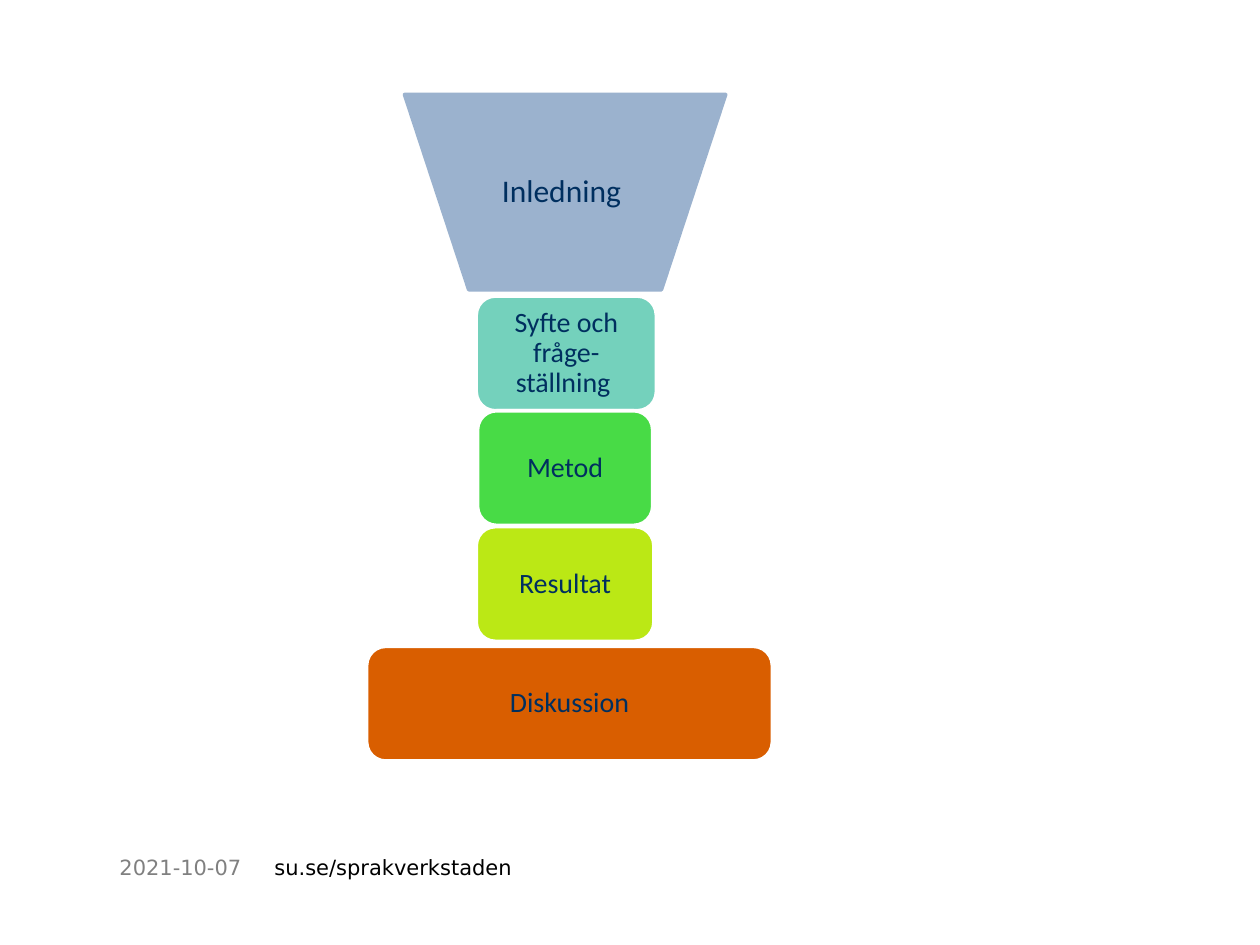
from pptx import Presentation
from pptx.dml.color import RGBColor
from pptx.enum.shapes import MSO_SHAPE
from pptx.enum.text import MSO_ANCHOR, PP_ALIGN
from pptx.util import Inches, Pt

ROUNDED = MSO_SHAPE.ROUNDED_RECTANGLE
FUNNEL = MSO_SHAPE.FLOWCHART_MANUAL_OPERATION
MIDDLE, TOP = MSO_ANCHOR.MIDDLE, MSO_ANCHOR.TOP
CENTER, LEFT = PP_ALIGN.CENTER, PP_ALIGN.LEFT

NAVY, WHITE, BLUE = "002F5F", "FFFFFF", "9BB2CE"
BLOCK_HEIGHT = 0.91

BLOCKS = [
    ("Syfte och fråge-ställning ", 3.78, 2.35, 1.43, "74D1BC"),
    ("Metod", 3.79, 3.26, 1.39, "48DB46"),
    ("Resultat", 3.78, 4.18, 1.41, "BBE815"),
    ("Diskussion", 2.91, 5.13, 3.22, "D95E00"),
]
FOOTER = [
    ("2021-10-07", (0.85, 6.73, 1.23, 0.31), "808080", MIDDLE),
    ("su.se/sprakverkstaden", (2.08, 6.73, 3.17, 0.51), "000000", TOP),
]


def color(value):
    return RGBColor.from_string(value)


def write(box, text, *, size, font, ink, anchor=MIDDLE, align=LEFT, spacing=1.0):
    frame = box.text_frame
    frame.word_wrap = True
    frame.vertical_anchor = anchor
    para = frame.paragraphs[0]
    para.alignment = align
    para.line_spacing = spacing
    span = para.add_run()
    span.text = text
    span.font.size = Pt(size)
    span.font.name = font
    span.font.color.rgb = color(ink)


def add_block(page, kind, place, text, *, fill, line, size):
    block = page.shapes.add_shape(kind, *map(Inches, place))
    block.shadow.inherit = False
    block.fill.solid()
    block.fill.fore_color.rgb = color(fill)
    block.line.color.rgb = color(line)
    block.line.width = Pt(2)
    write(block, text, size=size, font="Calibri", ink=NAVY, align=CENTER, spacing=0.9)
    return block


def main():
    deck = Presentation()
    deck.slide_width, deck.slide_height = Inches(10), Inches(7.5)
    page = deck.slides.add_slide(deck.slide_layouts[6])

    for text, left, top, width, fill in BLOCKS:
        block = add_block(page, ROUNDED, (left, top, width, BLOCK_HEIGHT), text,
                          fill=fill, line=WHITE, size=16)
        frame = block.text_frame
        frame.margin_left = frame.margin_right = Inches(0.07)
        frame.margin_top = frame.margin_bottom = Inches(0.04)

    for text, place, ink, anchor in FOOTER:
        box = page.shapes.add_textbox(*map(Inches, place))
        write(box, text, size=12, font="DejaVu Sans", ink=ink, anchor=anchor)

    add_block(page, FUNNEL, (3.21, 0.75, 2.55, 1.55), "Inledning ",
              fill=BLUE, line=BLUE, size=18)
    deck.save("out.pptx")


if __name__ == "__main__":
    main()
